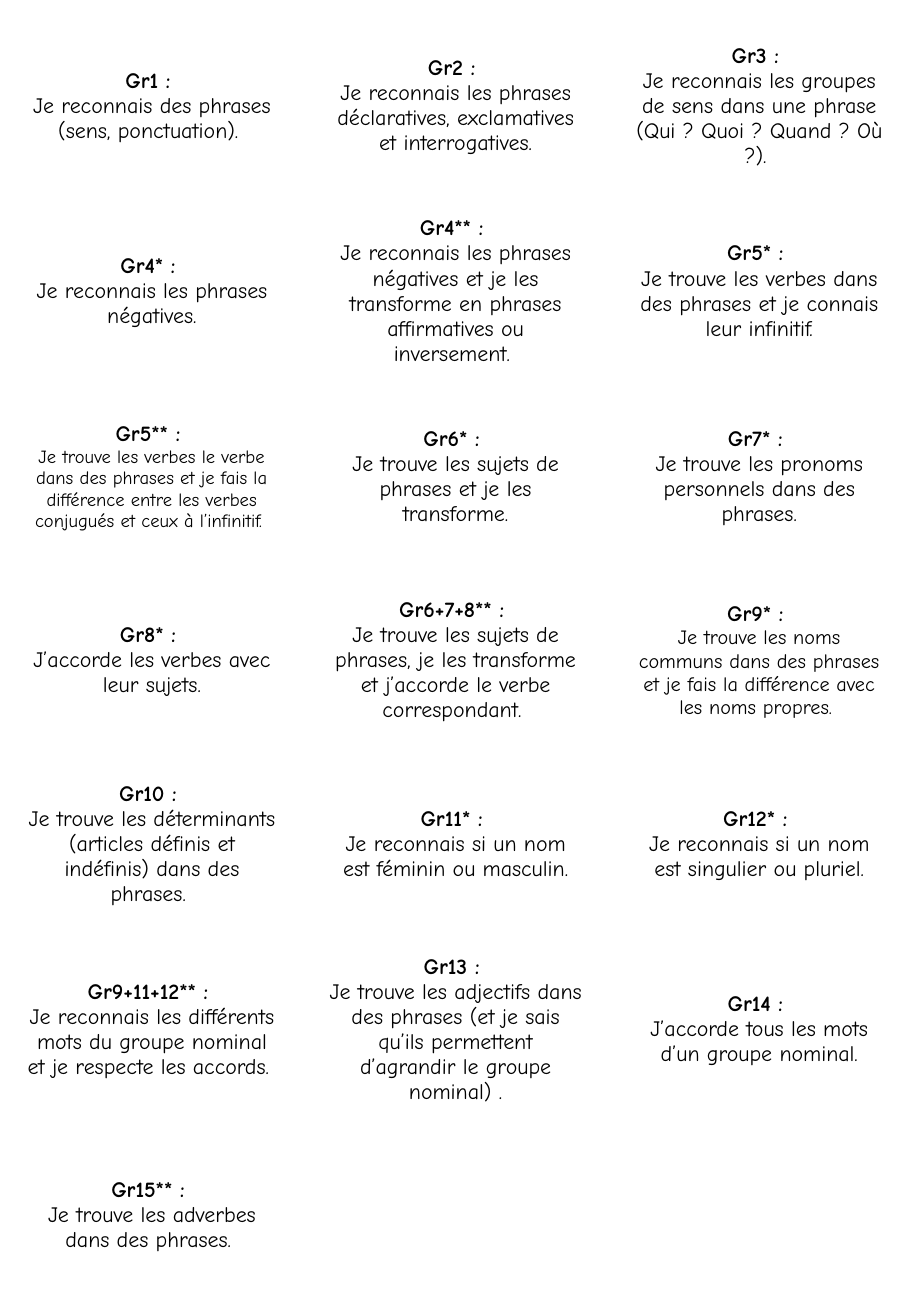
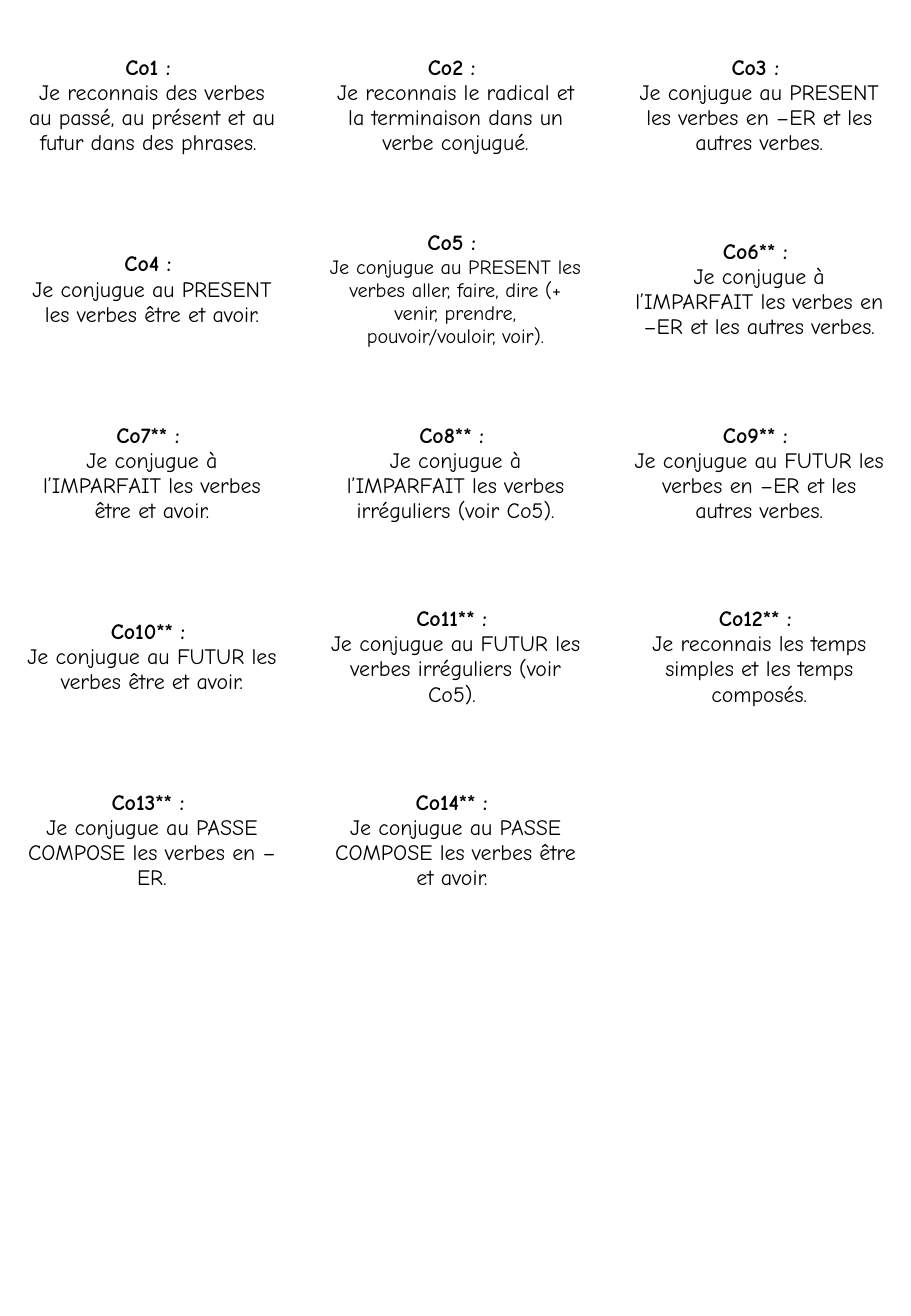
from dataclasses import dataclass

from pptx import Presentation
from pptx.dml.color import RGBColor
from pptx.enum.text import MSO_VERTICAL_ANCHOR as Anchor, PP_ALIGN as Align
from pptx.util import Cm, Pt

INK = RGBColor(0x00, 0x00, 0x00)
PAPER = RGBColor(0xFF, 0xFF, 0xFF)
FONT = "Comic Neue"
COLUMNS, ROWS = 3, 7
PAGE_WIDTH, PAGE_HEIGHT = Cm(19.05), Cm(27.51)
GRID_TOP = Cm(0.3)
ROW_HEIGHT, TALL_ROW_HEIGHT = Cm(3.84), Cm(3.91)
SIDE_MARGIN, END_MARGIN = Cm(0.53), Cm(0.36)


@dataclass(frozen=True)
class Skill:
    code: str
    goal: str
    size: int = 13


@dataclass(frozen=True)
class SkillSheet:
    skills: tuple[Skill, ...]
    tall_rows: tuple[int, ...] = ()


GRAMMAR = SkillSheet(
    (
        Skill("Gr1", "Je reconnais des phrases (sens, ponctuation). "),
        Skill("Gr2", "Je reconnais les phrases déclaratives, exclamatives et interrogatives."),
        Skill("Gr3", "Je reconnais les groupes de sens dans une phrase (Qui ? Quoi ? Quand ? Où ?). "),
        Skill("Gr4*", "Je reconnais les phrases négatives."),
        Skill("Gr4**", "Je reconnais les phrases négatives et je les transforme en phrases "
                       "affirmatives ou inversement. "),
        Skill("Gr5*", "Je trouve les verbes dans des phrases et je connais leur infinitif."),
        Skill("Gr5**", "Je trouve les verbes le verbe dans des phrases et je fais la différence "
                       "entre les verbes conjugués et ceux à l’infinitif. ", size=11),
        Skill("Gr6*", "Je trouve les sujets de phrases et je les transforme."),
        Skill("Gr7*", "Je trouve les pronoms personnels dans des phrases."),
        Skill("Gr8*", "J’accorde les verbes avec leur sujets."),
        Skill("Gr6+7+8**", "Je trouve les sujets de phrases, je les transforme et j’accorde "
                           "le verbe correspondant. "),
        Skill("Gr9*", "Je trouve les noms communs dans des phrases et je fais la différence "
                      "avec les noms propres. ", size=12),
        Skill("Gr10", "Je trouve les déterminants (articles définis et indéfinis) dans des phrases. "),
        Skill("Gr11*", "Je reconnais si un nom est féminin ou masculin."),
        Skill("Gr12*", "Je reconnais si un nom est singulier ou pluriel."),
        Skill("Gr9+11+12**", "Je reconnais les différents mots du groupe nominal et je respecte "
                             "les accords. "),
        Skill("Gr13", "Je trouve les adjectifs dans des phrases (et je sais qu’ils permettent "
                      "d’agrandir le groupe nominal) ."),
        Skill("Gr14", "J’accorde tous les mots d’un groupe nominal."),
        Skill("Gr15**", "Je trouve les adverbes dans des phrases. "),
    ),
    tall_rows=(1, 5),
)

CONJUGATION = SkillSheet(
    (
        Skill("Co1", "Je reconnais des verbes au passé, au présent et au futur dans des phrases. "),
        Skill("Co2", "Je reconnais le radical et la terminaison dans un verbe conjugué."),
        Skill("Co3", "Je conjugue au PRESENT les verbes en –ER et les autres verbes."),
        Skill("Co4", "Je conjugue au PRESENT les verbes être et avoir."),
        Skill("Co5", "Je conjugue au PRESENT les verbes aller, faire, dire (+ venir, prendre, "
                     "pouvoir/vouloir, voir).", size=12),
        Skill("Co6**", "Je conjugue à l’IMPARFAIT les verbes en –ER et les autres verbes."),
        Skill("Co7**", "Je conjugue à l’IMPARFAIT les verbes être et avoir."),
        Skill("Co8**", "Je conjugue à l’IMPARFAIT les verbes irréguliers (voir Co5)."),
        Skill("Co9**", "Je conjugue au FUTUR les verbes en –ER et les autres verbes."),
        Skill("Co10**", "Je conjugue au FUTUR les verbes être et avoir."),
        Skill("Co11**", "Je conjugue au FUTUR les verbes irréguliers (voir Co5). "),
        Skill("Co12**", "Je reconnais les temps simples et les temps composés."),
        Skill("Co13**", "Je conjugue au PASSE COMPOSE les verbes en –ER."),
        Skill("Co14**", "Je conjugue au PASSE COMPOSE les verbes être et avoir. "),
    ),
)


def write(paragraph, text: str, *, size: int = 13, bold: bool = False) -> None:
    paragraph.alignment = Align.CENTER
    run = paragraph.add_run()
    run.text = text
    run.font.name = FONT
    run.font.size = Pt(size)
    run.font.bold = bold
    run.font.color.rgb = INK


def fill_card(card, skill: Skill) -> None:
    write(card.text_frame.paragraphs[0], f"{skill.code} : ", bold=True)
    write(card.text_frame.add_paragraph(), skill.goal, size=skill.size)


def add_sheet(deck, sheet: SkillSheet) -> None:
    slide = deck.slides.add_slide(deck.slide_layouts[6])
    heights = [TALL_ROW_HEIGHT if row in sheet.tall_rows else ROW_HEIGHT for row in range(ROWS)]
    grid = slide.shapes.add_table(ROWS, COLUMNS, 0, GRID_TOP, PAGE_WIDTH, sum(heights)).table
    grid.first_row = False
    grid.horz_banding = False
    for row, height in zip(grid.rows, heights):
        row.height = height
    cards = list(grid.iter_cells())
    for card in cards:
        card.fill.solid()
        card.fill.fore_color.rgb = PAPER
        card.vertical_anchor = Anchor.MIDDLE
        card.margin_left = card.margin_right = SIDE_MARGIN
        card.margin_top = card.margin_bottom = END_MARGIN
    for card, skill in zip(cards, sheet.skills):
        fill_card(card, skill)


def main() -> None:
    deck = Presentation()
    deck.slide_width, deck.slide_height = PAGE_WIDTH, PAGE_HEIGHT
    for sheet in (GRAMMAR, CONJUGATION):
        add_sheet(deck, sheet)
    deck.save("out.pptx")


if __name__ == "__main__":
    main()
